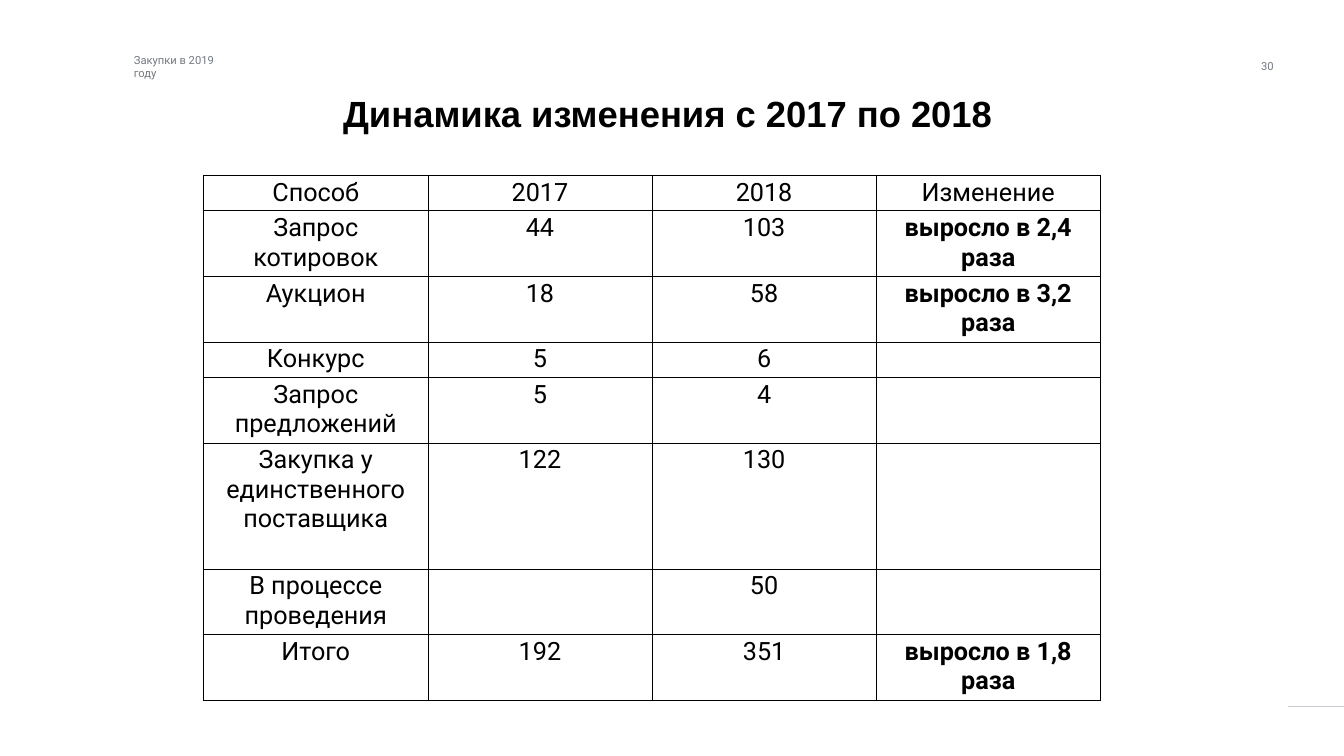
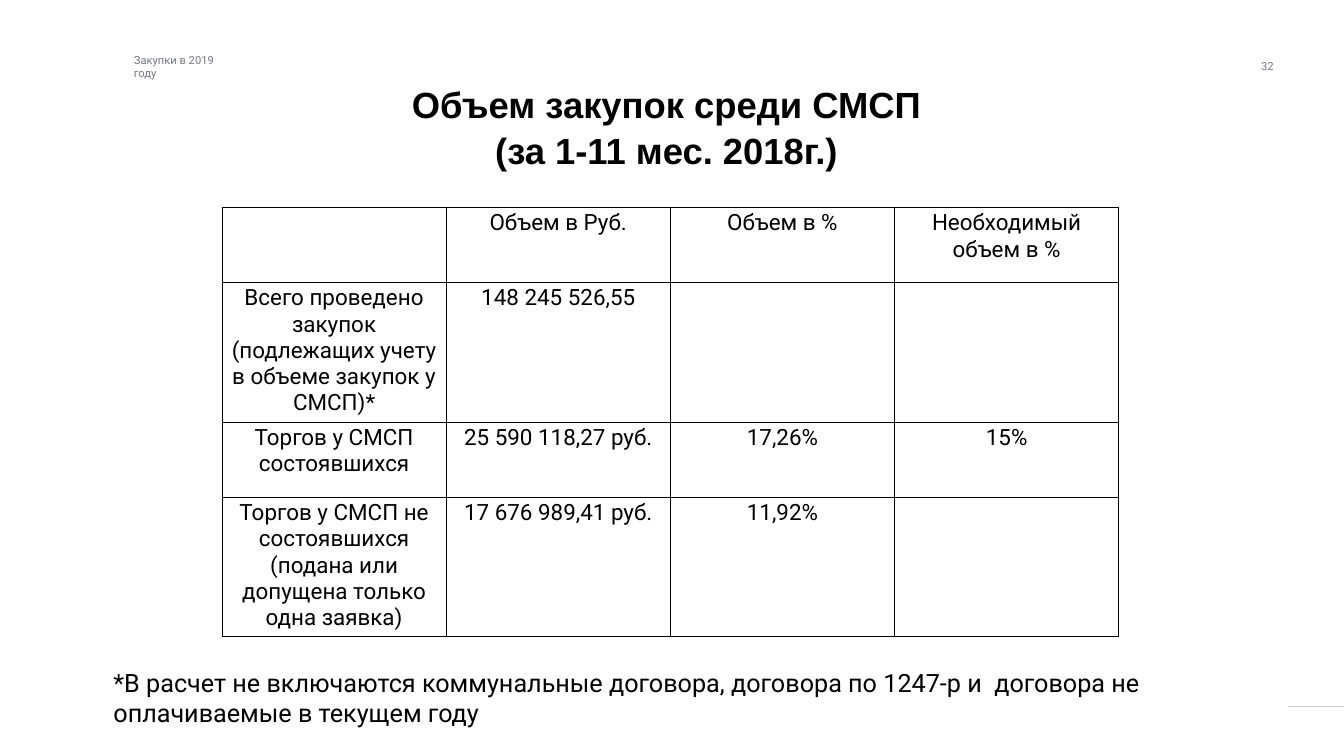
"""Build two slides of purchase tables with a shared header and title style."""
import dataclasses
import typing

import pptx
import pptx.dml.color
import pptx.enum.shapes
import pptx.enum.text
import pptx.oxml.ns
import pptx.slide
import pptx.util
from lxml import etree

PX = 9525
WIDE, HIGH = 2560, 1440
COLS, COL_WIDE = 4, 427
HUES = {"ink": "000000", "gray": "747A82", "rule": "C8CBD1"}
ALIGN = pptx.enum.text.PP_ALIGN
ANCHOR = pptx.enum.text.MSO_ANCHOR
Box = tuple[int, int, int, int]


@dataclasses.dataclass(frozen=True)
class Style:
    size: int
    font: str = "Roboto"
    hue: str = "ink"
    bold: bool = False
    align: typing.Any = ALIGN.CENTER
    pitch: float = 1.0


@dataclasses.dataclass(frozen=True)
class Label:
    text: str
    box: Box
    style: Style
    inset: int = 0
    wrap: bool = False


@dataclasses.dataclass(frozen=True)
class Grid:
    left: int
    top: int
    size: int
    highs: tuple[int, ...]
    rows: tuple[tuple[str, ...], ...]
    bold: str = ""


@dataclasses.dataclass(frozen=True)
class Page:
    number: int
    title: str
    box: Box
    grid: Grid
    notes: tuple[Label, ...] = ()


TITLE = Style(52, "Arial", bold=True, pitch=1.05)
SMALL = Style(16, hue="gray", align=ALIGN.LEFT)
COUNT = dataclasses.replace(SMALL, align=ALIGN.RIGHT)
NOTE = Style(36, align=ALIGN.LEFT)

HEADER = Label("Закупки в 2019 году", (255, 114, 199, 26), SMALL, wrap=True)

ONE, TWO, FOUR = 67, 125, 240
SHORT, TALL = 143, 266

PAGES = (
    Page(
        30, "Динамика изменения с 2017 по 2018", (641, 166, 1262, 95),
        Grid(388, 334, 36, (ONE, TWO, TWO, ONE, TWO, FOUR, TWO, TWO), (
            ("Способ", "2017", "2018", "Изменение"),
            ("Запрос котировок", "44", "103", "выросло в 2,4 раза"),
            ("Аукцион", "18", "58", "выросло в 3,2 раза"),
            ("Конкурс", "5", "6", ""),
            ("Запрос предложений", "5", "4", ""),
            ("Закупка у единственного поставщика", "122", "130", ""),
            ("В процессе проведения", "", "50", ""),
            ("Итого", "192", "351", "выросло в 1,8 раза"),
        ), bold="выросло"),
    ),
    Page(
        32, "Объем закупок среди СМСП\n(за 1-11 мес. 2018г.)", (772, 150, 995, 179),
        Grid(423, 395, 32, (SHORT, TALL, SHORT, TALL), (
            ("", "Объем в Руб.", "Объем в %", "Необходимый объем в %"),
            ("Всего проведено закупок (подлежащих учету в объеме закупок у СМСП)*",
             "148 245 526,55", "", ""),
            ("Торгов у СМСП состоявшихся", "25 590 118,27 руб.", "17,26%", "15%"),
            ("Торгов у СМСП не состоявшихся (подана или допущена только одна заявка)",
             "17 676 989,41 руб.", "11,92%", ""),
        )),
        (Label("*В расчет не включаются коммунальные договора, договора по 1247-р и  "
               "договора не оплачиваемые в текущем году",
               (210, 1265, 2132, 127), NOTE, 6, True),),
    ),
)


def put(thing: typing.Any, form: dict[str, typing.Any]) -> None:
    for name, value in form.items():
        setattr(thing, name, value)


def scale(*sides: int) -> list[int]:
    return [side * PX for side in sides]


def tint(hue: str) -> pptx.dml.color.RGBColor:
    return pptx.dml.color.RGBColor.from_string(HUES[hue])


def write(frame: typing.Any, text: str, style: Style) -> None:
    frame.text = text
    for para in frame.paragraphs:
        put(para, {"alignment": style.align, "line_spacing": style.pitch})
        put(para.font, {"size": pptx.util.Pt(style.size), "name": style.font,
                        "bold": style.bold})
        para.font.color.rgb = tint(style.hue)


def draw_label(slide: pptx.slide.Slide, label: Label) -> None:
    frame = slide.shapes.add_textbox(*scale(*label.box)).text_frame
    sides = ("left", "top", "right", "bottom")
    put(frame, {f"margin_{side}": label.inset * PX for side in sides})
    put(frame, {"word_wrap": label.wrap, "vertical_anchor": ANCHOR.MIDDLE})
    write(frame, label.text, label.style)


def draw_frame(slide: pptx.slide.Slide) -> None:
    draw_label(slide, HEADER)
    kind = pptx.enum.shapes.MSO_CONNECTOR.STRAIGHT
    rule = slide.shapes.add_connector(kind, *scale(2453, 1346, WIDE, 1346))
    rule.line.color.rgb = tint("rule")
    rule.line.width = pptx.util.Pt(1)
    etree.SubElement(rule._element.spPr, pptx.oxml.ns.qn("a:effectLst"))


def edge(cell: typing.Any) -> None:
    qn = pptx.oxml.ns.qn
    props = cell._tc.get_or_add_tcPr()
    for side in "LRTB":
        line = etree.SubElement(props, qn(f"a:ln{side}"), w=str(pptx.util.Pt(1)))
        fill = etree.SubElement(line, qn("a:solidFill"))
        etree.SubElement(fill, qn("a:srgbClr"), val=HUES["ink"])


def draw_grid(slide: pptx.slide.Slide, grid: Grid) -> None:
    area = scale(grid.left, grid.top, COLS * COL_WIDE, sum(grid.highs))
    table = slide.shapes.add_table(len(grid.rows), COLS, *area).table
    put(table, {"first_row": False, "horz_banding": False})
    for col in table.columns:
        col.width = COL_WIDE * PX
    for row, high, texts in zip(table.rows, grid.highs, grid.rows):
        row.height = high * PX
        for cell, text in zip(row.cells, texts):
            bold = bool(grid.bold) and text.startswith(grid.bold)
            write(cell.text_frame, text, Style(grid.size, bold=bold))
            edge(cell)
            cell.fill.background()


def draw_page(deck: typing.Any, page: Page) -> None:
    slide = deck.slides.add_slide(deck.slide_layouts[6])
    draw_frame(slide)
    draw_label(slide, Label(str(page.number), (2400, 113, 26, 25), COUNT))
    draw_label(slide, Label(page.title, page.box, TITLE, 6))
    draw_grid(slide, page.grid)
    for note in page.notes:
        draw_label(slide, note)


def main() -> None:
    deck = pptx.Presentation()
    put(deck, {"slide_width": WIDE * PX, "slide_height": HIGH * PX})
    for page in PAGES:
        draw_page(deck, page)
    deck.save("out.pptx")


if __name__ == "__main__":
    main()
